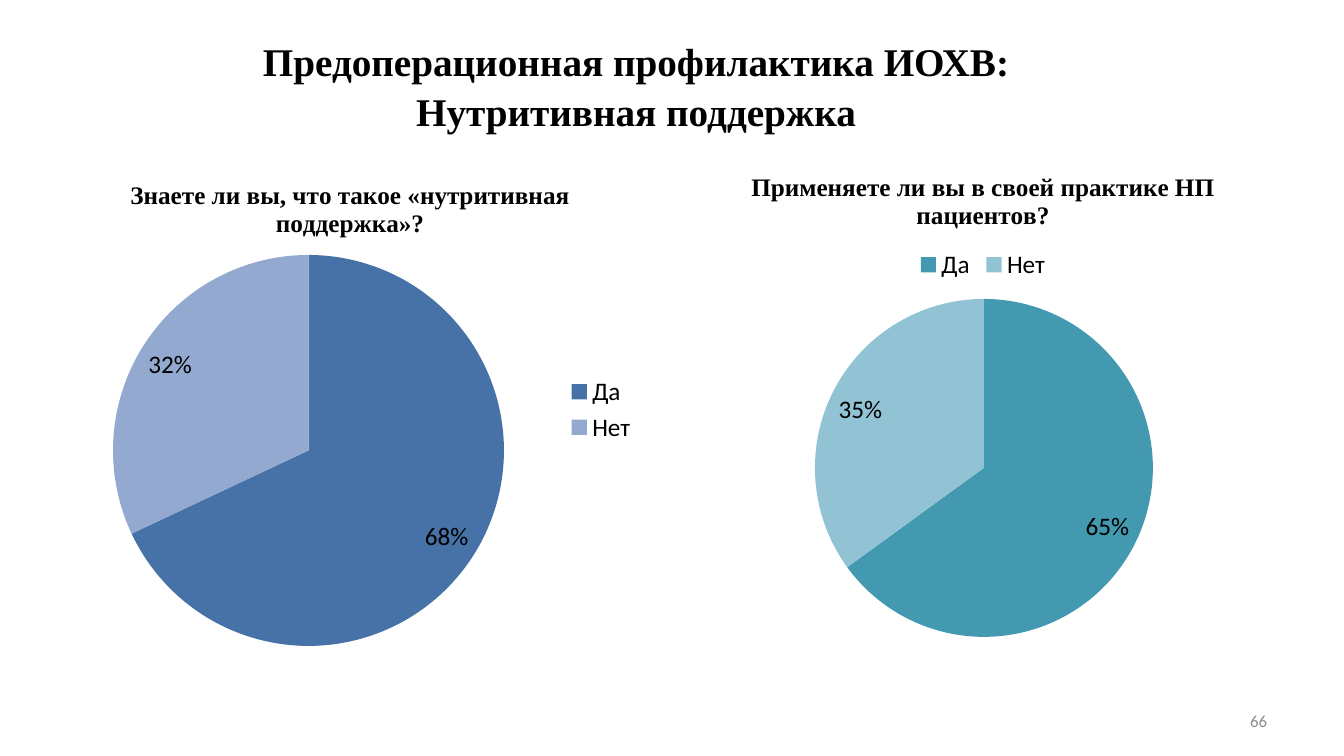
import pptx
import pptx.chart.data
import pptx.dml.color
import pptx.enum.chart
import pptx.enum.text
import pptx.oxml
import pptx.util

PX = 914400 / 100.8
WIDE, HIGH = 594, 499
HUES = {
    "ink": "000000", "gray": "8C8C8C",
    "blue": "4672A8", "pale blue": "93A9CF",
    "teal": "4299B0", "pale teal": "91C3D5",
}
SERIF, SANS = "Times New Roman", "Calibri"
Align = pptx.enum.text.PP_ALIGN
Side = pptx.enum.chart.XL_LEGEND_POSITION


def px(*sizes):
    return [pptx.util.Emu(round(size * PX)) for size in sizes]


def style(font, size, face, hue, bold=False):
    font.size = pptx.util.Pt(size)
    font.name = face
    font.bold = bold
    font.color.rgb = pptx.dml.color.RGBColor.from_string(HUES[hue])


deck = pptx.Presentation()
deck.slide_width, deck.slide_height = px(1344, 756)
slide = deck.slides.add_slide(deck.slide_layouts[5])

title = slide.shapes.title
title.left, title.top, title.width, title.height = px(249, 30, 774, 105)
frame = title.text_frame
frame.auto_size = pptx.enum.text.MSO_AUTO_SIZE.NONE
frame.word_wrap = False
frame.vertical_anchor = pptx.enum.text.MSO_ANCHOR.TOP
for row, words in enumerate(["Предоперационная профилактика ИОХВ:", "Нутритивная поддержка"]):
    para = frame.add_paragraph() if row else frame.paragraphs[0]
    para.alignment = Align.CENTER
    para.line_spacing = 1.05
    run = para.add_run()
    run.text = words
    style(run.font, 28, SERIF, "ink", True)

frame = slide.shapes.add_textbox(*px(964, 701, 313, 40)).text_frame
frame.word_wrap = True
frame.vertical_anchor = pptx.enum.text.MSO_ANCHOR.MIDDLE
para = frame.paragraphs[0]
para.alignment = Align.RIGHT
run = para.add_run()
run.text = "66"
style(run.font, 12, SANS, "gray")

pies = [
    ("Знаете ли вы, что такое «нутритивная поддержка»?", 53, 160, (68, 32),
     ("blue", "pale blue"), Side.RIGHT, (60, 95, 391)),
    ("Применяете ли вы в своей практике НП пациентов?", 686, 152, (65, 35),
     ("teal", "pale teal"), Side.TOP, (129, 147, 338)),
]
for words, left, top, values, hues, side, (x, y, span) in pies:
    data = pptx.chart.data.CategoryChartData()
    data.categories = ["Да", "Нет"]
    data.add_series("Series 1", values)
    chart = slide.shapes.add_chart(
        pptx.enum.chart.XL_CHART_TYPE.PIE, *px(left, top, WIDE, HIGH), data).chart
    style(chart.font, 18, SANS, "ink")

    chart.has_title = True
    run = chart.chart_title.text_frame.paragraphs[0].add_run()
    run.text = words
    style(run.font, 18, SERIF, "ink", True)

    chart.has_legend = True
    chart.legend.position = side
    chart.legend.include_in_layout = False

    plot = chart.plots[0]
    plot.vary_by_categories = True
    for spot, hue in enumerate(hues):
        fill = plot.series[0].points[spot].format.fill
        fill.solid()
        fill.fore_color.rgb = pptx.dml.color.RGBColor.from_string(HUES[hue])

    plot.has_data_labels = True
    labels = plot.data_labels
    labels.show_value = False
    labels.show_percentage = True
    labels.number_format = "0%"
    labels.number_format_is_linked = False
    labels.position = pptx.enum.chart.XL_LABEL_POSITION.INSIDE_END
    style(labels.font, 18, SANS, "ink")

    area = chart._chartSpace.chart.plotArea
    for old in area.xpath("c:layout"):
        area.remove(old)
    area.insert(0, pptx.oxml.parse_xml(
        '<c:layout xmlns:c="http://schemas.openxmlformats.org/drawingml/2006/chart">'
        '<c:manualLayout><c:layoutTarget val="inner"/>'
        '<c:xMode val="edge"/><c:yMode val="edge"/>'
        f'<c:x val="{x / WIDE}"/><c:y val="{y / HIGH}"/>'
        f'<c:w val="{span / WIDE}"/><c:h val="{span / HIGH}"/>'
        '</c:manualLayout></c:layout>'))

deck.save("out.pptx")
